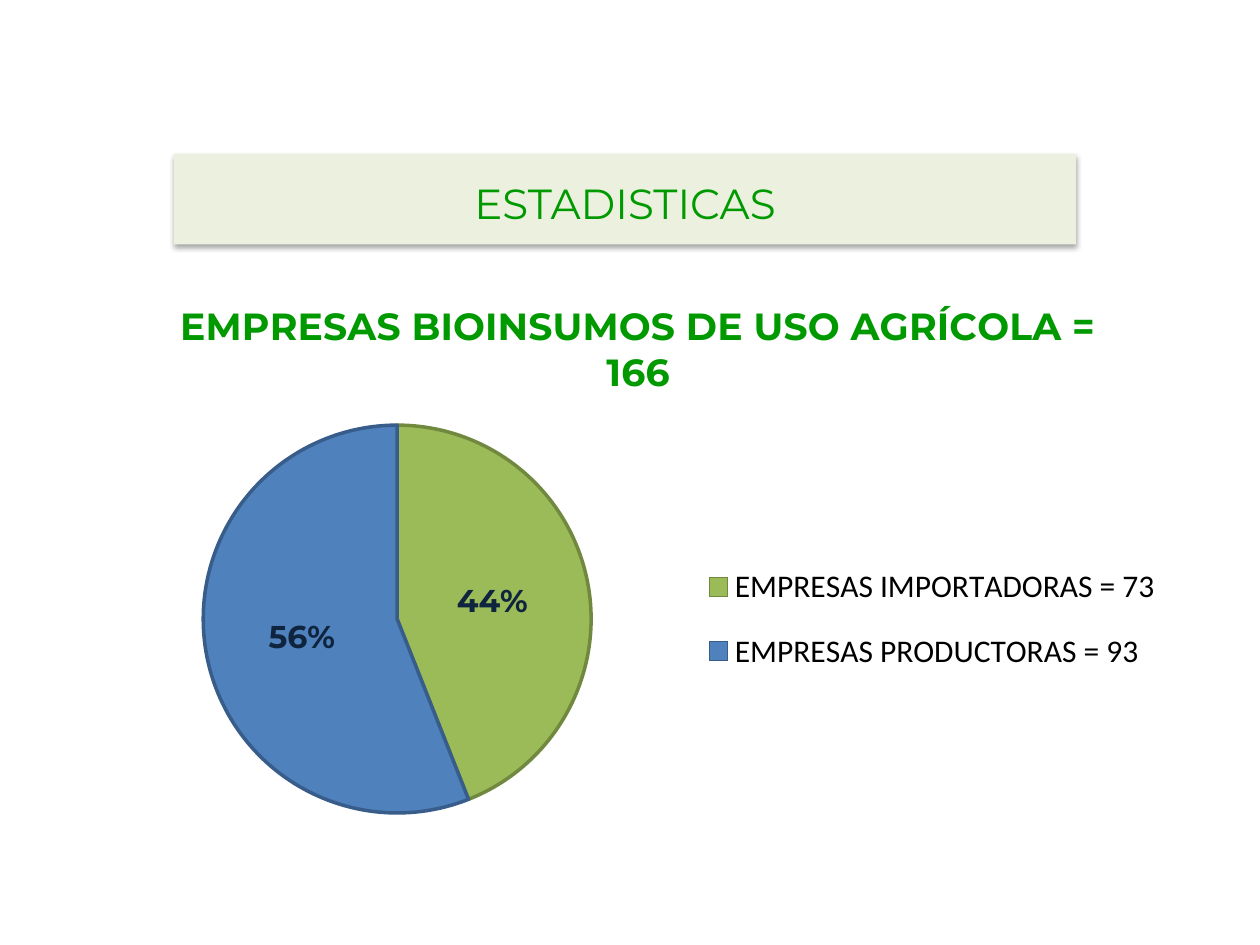
from lxml import etree
from pptx import Presentation
from pptx import util as u
from pptx.chart.data import CategoryChartData
from pptx.dml.color import RGBColor
from pptx.enum import chart as ch, shapes, text
from pptx.oxml import parse_xml
from pptx.oxml.ns import nsdecls, qn

# Content
HEAD = "ESTADISTICAS"
TITLE = "EMPRESAS BIOINSUMOS DE USO AGRÍCOLA = 166"
# name, percent, fill, outline
SLICES = [
    ("EMPRESAS IMPORTADORAS = 73", 44, "9BBB59", "71893F"),
    ("EMPRESAS PRODUCTORAS = 93", 56, "4F81BD", "385D8A"),
]
GREEN = "009900"


def paint(target, color):
    target.rgb = RGBColor.from_string(color)


def style(font, size, color, face, bold=False):
    font.size, font.name, font.bold = u.Pt(size), face, bold
    paint(font.color, color)


def place(parent, spot, inner=False):
    """Build a manual chart layout from fractions of the chart area."""
    old = parent.find(qn("c:layout"))
    if old is not None:
        parent.remove(old)
    parts = [("layoutTarget", "inner")] if inner else []
    parts += [("xMode", "edge"), ("yMode", "edge"), *zip("xywh", spot)]
    lay = parse_xml(f"<c:layout {nsdecls('c')}><c:manualLayout/></c:layout>")
    for tag, val in parts:
        etree.SubElement(lay[0], qn("c:" + tag)).set("val", str(val))
    mark = parent.find(qn("c:legendPos"))
    parent.insert(0 if mark is None else parent.index(mark) + 1, lay)


deck = Presentation()
deck.slide_width, deck.slide_height = u.Inches(10), u.Inches(7.5)
slide = deck.slides.add_slide(deck.slide_layouts[6])

# Heading band with a soft shadow
band = slide.shapes.add_shape(
    shapes.MSO_SHAPE.RECTANGLE, *map(u.Inches, (1.38, 1.22, 7.16, 0.72)))
band.fill.solid()
paint(band.fill.fore_color, "EBF1DE")
band.line.fill.background()
band.shadow.inherit = False
band.element.spPr.find(qn("a:effectLst")).append(parse_xml(
    f'<a:outerShdw {nsdecls("a")} blurRad="{u.Pt(3.1)}" dist="{u.Pt(1.8)}" '
    'dir="5400000" rotWithShape="0"><a:srgbClr val="000000">'
    '<a:alpha val="35000"/></a:srgbClr></a:outerShdw>'))

# Heading text
box = slide.shapes.add_textbox(*map(u.Inches, (1.38, 1.36, 7.16, 0.5)))
box.text_frame.word_wrap = True
box.text_frame.auto_size = text.MSO_AUTO_SIZE.SHAPE_TO_FIT_TEXT
para = box.text_frame.paragraphs[0]
para.text = HEAD
para.alignment = text.PP_ALIGN.CENTER
style(para.font, 24, GREEN, "Montserrat")

# Pie chart
data = CategoryChartData()
data.categories = [row[0] for row in SLICES]
data.add_series("Series 1", [row[1] for row in SLICES])
chart = slide.shapes.add_chart(
    ch.XL_CHART_TYPE.PIE, *map(u.Inches, (0.4, 2.18, 9.33, 4.41)), data).chart
style(chart.font, 18, "000000", "Calibri")

chart.has_title = True
chart.chart_title.include_in_layout = False
head = chart.chart_title.text_frame.paragraphs[0]
head.text = TITLE
style(head.font, 21.6, GREEN, "Montserrat", True)

chart.has_legend = True
chart.legend.position = ch.XL_LEGEND_POSITION.RIGHT
chart.legend.include_in_layout = False

# Slices and percent labels
plot = chart.plots[0]
plot.vary_by_categories = True
for i, (_, _, fill, edge) in enumerate(SLICES):
    form = plot.series[0].points[i].format
    form.fill.solid()
    paint(form.fill.fore_color, fill)
    form.line.width = u.Pt(2)
    paint(form.line.color, edge)
plot.has_data_labels = True
tags = plot.data_labels
tags.show_percentage, tags.show_value = True, False
tags.number_format, tags.number_format_is_linked = "0%", False
tags.position = ch.XL_LABEL_POSITION.CENTER
style(tags.font, 18, "0F243E", "Montserrat", True)

# Pie and legend positions
root = chart.element
place(root.find(".//" + qn("c:plotArea")), (0.13, 0.27, 0.33, 0.7), True)
place(root.find(".//" + qn("c:legend")), (0.55, 0.48, 0.4, 0.28))

deck.save("out.pptx")
